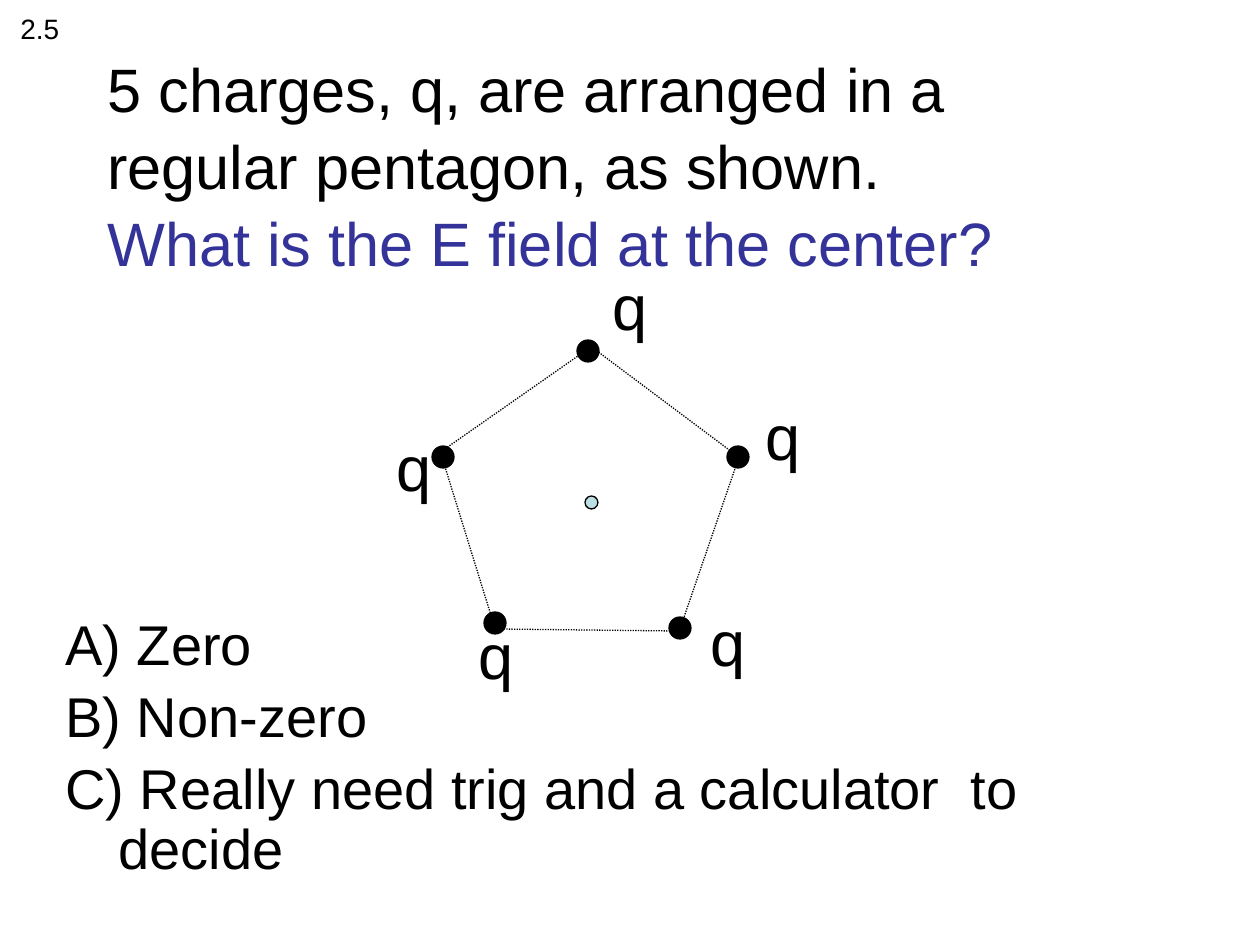
from lxml import etree
from pptx import Presentation
from pptx import util as u
from pptx.dml.color import RGBColor
from pptx.enum import dml, shapes, text
from pptx.oxml import ns

PX_PER_INCH = 126
COLORS = {"ink": "000000", "question": "333399", "center": "BBE0E3"}
FONT = "Arial"


def px(length):
    return u.Emu(round(length * 914400 / PX_PER_INCH))


def rgb(name):
    return RGBColor.from_string(COLORS[name])


def style_run(run, size, color="ink"):
    run.font.name = FONT
    run.font.size = u.Pt(size)
    run.font.color.rgb = rgb(color)


def add_text(parent, box, content, size, wrap=True):
    """Add a left-aligned text box, one paragraph per line of content."""
    shape = parent.add_textbox(*map(px, box))
    frame = shape.text_frame
    frame.word_wrap = wrap
    frame.text = content
    for paragraph in frame.paragraphs:
        for run in paragraph.runs:
            style_run(run, size)
    return frame


def add_question(slide, box):
    frame = add_text(
        slide.shapes, box,
        "5 charges, q, are arranged in a regular pentagon, as shown. \v"
        "What is the E field at the center?", 35)
    frame.vertical_anchor = text.MSO_ANCHOR.MIDDLE
    paragraph = frame.paragraphs[0]
    paragraph.line_spacing = 1.05
    style_run(paragraph.runs[-1], 35, "question")


def add_answers(slide, box):
    answers = [" Zero", " Non-zero",
               " Really need trig and a calculator  to decide"]
    frame = add_text(slide.shapes, box, "\n".join(answers), 32)
    for paragraph in frame.paragraphs:
        paragraph.line_spacing = 0.9
        paragraph.space_before = u.Pt(6.4)
        # Automatic lettering with a hanging indent
        properties = paragraph._p.get_or_add_pPr()
        properties.set("marL", str(px(53)))
        properties.set("indent", str(-px(53)))
        numbering = etree.SubElement(properties, ns.qn("a:buAutoNum"))
        numbering.set("type", "alphaUcParenR")


def add_dot(parent, left, top, size, color):
    dot = parent.add_shape(shapes.MSO_SHAPE.OVAL, px(left), px(top), px(size), px(size))
    dot.shadow.inherit = False
    dot.fill.solid()
    dot.fill.fore_color.rgb = rgb(color)
    dot.line.color.rgb = rgb("ink")
    dot.line.width = u.Pt(0.75)


def add_side(parent, start, end):
    side = parent.add_connector(
        shapes.MSO_CONNECTOR.STRAIGHT, *map(px, start + end))
    side.line.color.rgb = rgb("ink")
    side.line.width = u.Pt(0.75)
    side.line.dash_style = dml.MSO_LINE.ROUND_DOT
    etree.SubElement(side._element.spPr, ns.qn("a:effectLst"))


def add_pentagon(slide, left, top):
    """Draw the charges; all offsets are relative to the top left corner."""
    parent = slide.shapes.add_group_shape().shapes

    # Dotted sides
    sides = [((296, 368), (354, 199)), ((112, 368), (291, 370)),
             ((57, 193), (110, 364)), ((204, 88), (58, 190)),
             ((352, 194), (209, 87))]
    for start, end in sides:
        add_side(parent, (left + start[0], top + start[1]),
                 (left + end[0], top + end[1]))

    # Charges at the corners, then the center point
    for x, y in [(285, 356), (100, 351), (48, 185), (193, 79), (343, 185)]:
        add_dot(parent, left + x, top + y, 22, "ink")
    add_dot(parent, left + 201, top + 235, 13, "center")

    # Charge labels
    for x, y in [(216, 0), (369, 130), (314, 336), (82, 349), (0, 161)]:
        add_text(parent, (left + x, top + y, 60, 88), "q", 36, wrap=False)


def main():
    presentation = Presentation()
    presentation.slide_width = px(1260)
    presentation.slide_height = px(945)
    slide = presentation.slides.add_slide(presentation.slide_layouts[6])

    add_question(slide, (95, 84, 1071, 158))
    add_answers(slide, (53, 611, 1071, 252))
    add_pentagon(slide, 384, 261)
    # Question number
    add_text(slide.shapes, (8, 5, 64, 47), "2.5", 16, wrap=False)

    presentation.save("out.pptx")


if __name__ == "__main__":
    main()
